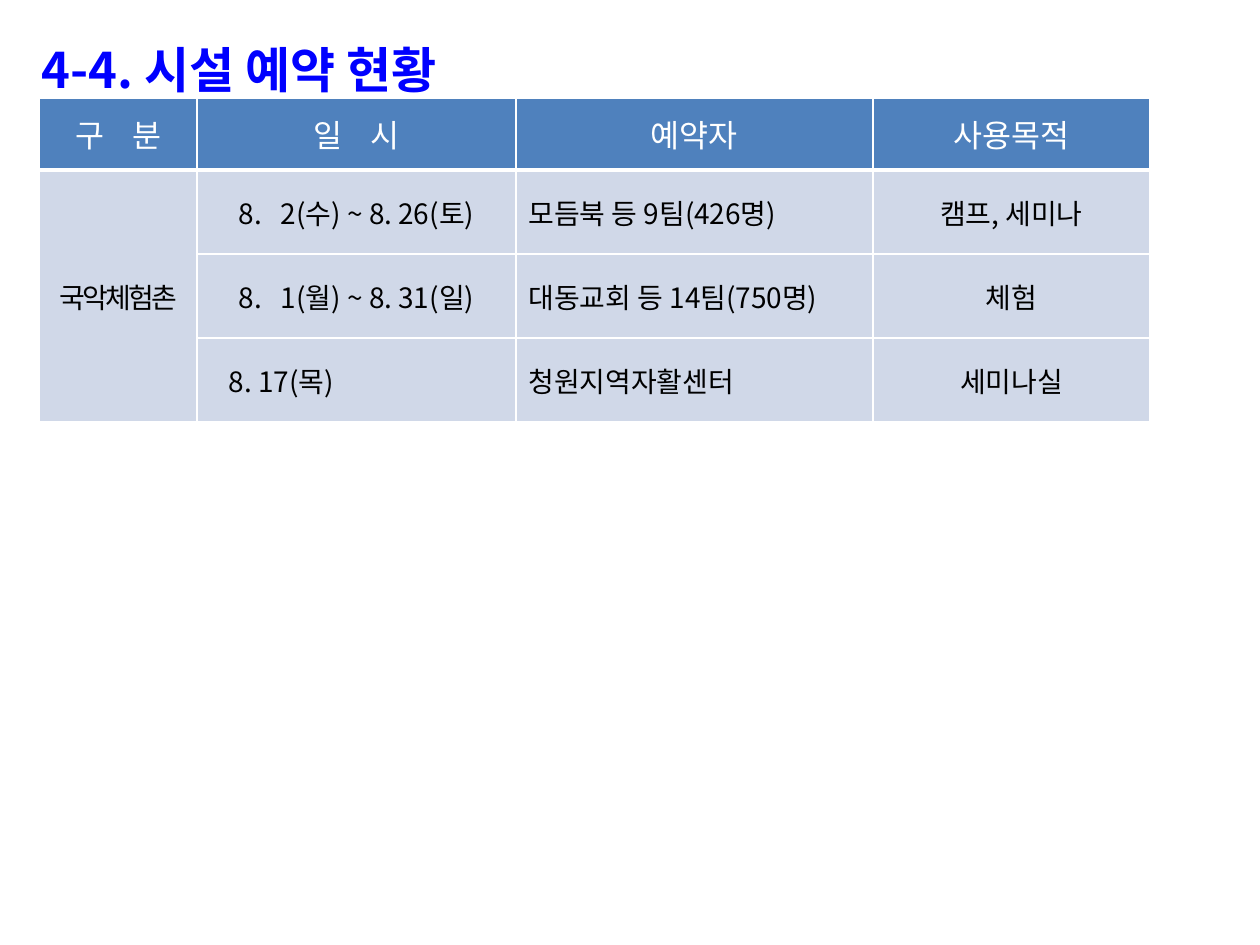
from lxml import etree
from pptx import Presentation
from pptx.dml.color import RGBColor
from pptx.enum.text import MSO_ANCHOR, PP_ALIGN
from pptx.oxml.ns import qn
from pptx.util import Emu, Pt

CENTER, LEFT = PP_ALIGN.CENTER, PP_ALIGN.LEFT
MIDDLE = MSO_ANCHOR.MIDDLE
FONT = "Noto Sans CJK KR"
BLUE, WHITE, BLACK = "0000FF", "FFFFFF", "000000"
HEADER_FILL, BODY_FILL = "4F81BD", "D0D8E8"

# Content: each cell is a list of (text, character spacing in points)
TITLE = "4-4. 시설 예약 현황"
WIDE, MEDIUM = (" ", 12), (" ", 7.2)
HEADER = [
    [("구", 0), WIDE, ("분", 0)],
    [("일", 0), WIDE, ("시", 0)],
    [("예약자", 0)],
    [("사용목적", 0)],
]
FACILITY = [("국악체험촌", -1.5)]
BOOKINGS = [
    [[("8.", 0), MEDIUM, ("2(수) ~ 8. 26(토)", 0)],
     [("모듬북 등 9팀(426명)", 0)], [("캠프, 세미나", 0)]],
    [[("8.", 0), MEDIUM, ("1(월) ~ 8. 31(일)", 0)],
     [("대동교회 등 14팀(750명)", 0)], [("체험", 0)]],
    [[("8. 17(목)", 0)],
     [("청원지역자활센터", 0)], [("세미나실", 0)]],
]
COLUMN_WIDTHS = [158, 319, 357, 277]
ROW_HEIGHTS = [72, 84, 84, 84]
ALIGNMENTS = [CENTER, CENTER, LEFT, CENTER]
SINGLE_DATE_INDENT = 32


def px(value):
    return Emu(round(value * 914400 / 126))


def color(value):
    return RGBColor.from_string(value)


def add_run(paragraph, text, size, fill, bold=False, spacing=0):
    run = paragraph.add_run()
    run.text = text
    run.font.size = Pt(size)
    run.font.bold = bold
    run.font.color.rgb = color(fill)
    run.font.name = FONT
    properties = run.font._element
    etree.SubElement(properties, qn("a:ea")).set("typeface", FONT)
    if spacing:
        properties.set("spc", str(round(spacing * 100)))


def set_borders(cell, widths):
    properties = cell._tc.get_or_add_tcPr()
    for index, (side, width) in enumerate(widths.items()):
        line = etree.Element(qn(f"a:ln{side}"), w=str(Pt(width)))
        solid = etree.SubElement(line, qn("a:solidFill"))
        etree.SubElement(solid, qn("a:srgbClr"), val=WHITE)
        properties.insert(index, line)


presentation = Presentation()
presentation.slide_width, presentation.slide_height = px(1260), px(945)
slide = presentation.slides.add_slide(presentation.slide_layouts[6])

# Title
title = slide.shapes.add_textbox(px(29), px(10), px(1071), px(102))
title.text_frame.word_wrap = True
paragraph = title.text_frame.paragraphs[0]
paragraph.line_spacing = 1.4
add_run(paragraph, TITLE, 28, BLUE, bold=True)

# Reservation table
table = slide.shapes.add_table(
    len(ROW_HEIGHTS), len(COLUMN_WIDTHS), px(39), px(98),
    px(sum(COLUMN_WIDTHS)), px(sum(ROW_HEIGHTS))).table
table.horz_banding = False
for column, width in zip(table.columns, COLUMN_WIDTHS):
    column.width = px(width)
for row, height in zip(table.rows, ROW_HEIGHTS):
    row.height = px(height)

rows = [HEADER] + [[[] if i else FACILITY] + booking
                   for i, booking in enumerate(BOOKINGS)]
for r, row in enumerate(rows):
    for c, runs in enumerate(row):
        cell = table.cell(r, c)
        cell.vertical_anchor = MIDDLE
        cell.fill.solid()
        cell.fill.fore_color.rgb = color(BODY_FILL if r else HEADER_FILL)
        set_borders(cell, {"L": 1, "R": 1, "T": 3 if r == 1 else 1,
                           "B": 1 if r else 3})
        paragraph = cell.text_frame.paragraphs[0]
        paragraph.alignment = ALIGNMENTS[c] if r else CENTER
        for text, spacing in runs:
            add_run(paragraph, text, 16 if r else 18,
                    BLACK if r else WHITE, spacing=spacing)

# The facility spans all bookings; the single date is indented
table.cell(1, 0).merge(table.cell(len(BOOKINGS), 0))
single_date = table.cell(len(BOOKINGS), 1)
single_date.margin_left = px(SINGLE_DATE_INDENT)
single_date.text_frame.paragraphs[0].alignment = LEFT

presentation.save("out.pptx")
